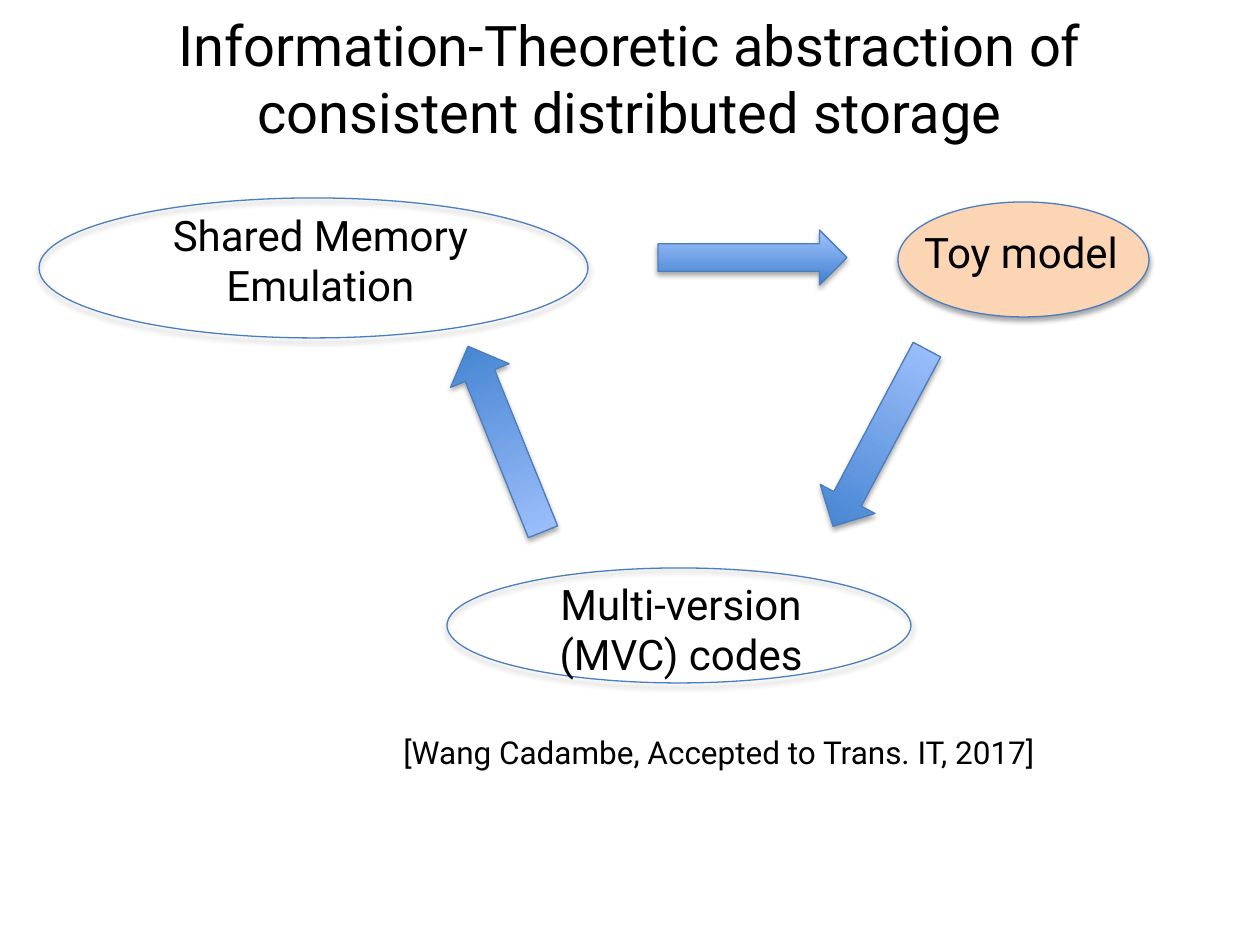
from lxml import etree
from pptx import Presentation
from pptx.dml.color import RGBColor
from pptx.enum.shapes import MSO_SHAPE
from pptx.enum.text import MSO_ANCHOR, MSO_AUTO_SIZE, PP_ALIGN
from pptx.oxml.ns import qn
from pptx.util import Emu, Pt

OVAL, DOWN, RIGHT = MSO_SHAPE.OVAL, MSO_SHAPE.DOWN_ARROW, MSO_SHAPE.RIGHT_ARROW
CENTER, LEFT = PP_ALIGN.CENTER, PP_ALIGN.LEFT

THEME = {
    "font": "Roboto", "text": "000000", "line": "4B7EBC", "peach": "FCD5B5",
    "arrow": ("3F80CE", "A4C4FF"), "shadow": "000000",
    "title": 32, "label": 24, "citation": 18, "line_width": 0.75,
}

# Content: boxes are (left, top, width, height) in px
TITLE = ("Information-Theoretic abstraction of consistent distributed storage",
         (63, -1, 1134, 157))
NODES = [  # label, oval box, label box, fill
    ("Toy model", (898, 202, 251, 115), (830, 220, 382, 64), "peach"),
    ("Shared Memory Emulation", (39, 198, 549, 140), (86, 203, 469, 115), None),
    ("Multi-version (MVC) codes", (447, 568, 464, 115), (490, 572, 382, 115), None),
]
ARROWS = [  # preset, box, rotation
    (RIGHT, (658, 230, 189, 55), 0),
    (DOWN, (849, 338, 62, 200), 28),
    (DOWN, (474, 339, 63, 200), 158),
]
CITATION = ("[Wang Cadambe, Accepted to Trans. IT, 2017]", (391, 727, 659, 51))


def emu(box):
    return [Emu(round(v * 914400 / 126)) for v in box]


def rgb(name):
    return RGBColor.from_string(THEME.get(name, name))


def write(tf, text, size, align=CENTER, wrap=True):
    tf.word_wrap = wrap
    p = tf.paragraphs[0]
    p.text, p.alignment = text, align
    p.font.name, p.font.size = THEME["font"], Pt(THEME[size])
    p.font.color.rgb = rgb("text")


def add_label(s, text, box, size, **options):
    tf = s.shapes.add_textbox(*emu(box)).text_frame
    write(tf, text, size, **options)


def add_outlined(s, preset, box):
    """Add a preset shape with the common thin line and soft drop shadow."""
    sp = s.shapes.add_shape(preset, *emu(box))
    sp.line.color.rgb = rgb("line")
    sp.line.width = Pt(THEME["line_width"])
    sp.shadow.inherit = False
    effects = sp._element.spPr.find(qn("a:effectLst"))
    shadow = etree.SubElement(effects, qn("a:outerShdw"), blurRad=str(Pt(3.1)),
                              dist=str(Pt(1.8)), dir="5400000", rotWithShape="0")
    color = etree.SubElement(shadow, qn("a:srgbClr"), val=THEME["shadow"])
    etree.SubElement(color, qn("a:alpha"), val="35000")
    return sp


prs = Presentation()
prs.slide_width, prs.slide_height = emu((1260, 945))
s = prs.slides.add_slide(prs.slide_layouts[5])

# Title
title = s.shapes.title
title.left, title.top, title.width, title.height = emu(TITLE[1])
write(title.text_frame, TITLE[0], "title")
title.text_frame.auto_size = MSO_AUTO_SIZE.NONE
title.text_frame.vertical_anchor = MSO_ANCHOR.MIDDLE

# Ovals with their labels
for text, oval_box, label_box, fill in NODES:
    oval = add_outlined(s, OVAL, oval_box)
    if fill:
        oval.fill.solid()
        oval.fill.fore_color.rgb = rgb(fill)
    else:
        oval.fill.background()
    add_label(s, text, label_box, "label")

# Cycle of gradient arrows
for preset, box, rotation in ARROWS:
    arrow = add_outlined(s, preset, box)
    arrow.rotation = rotation
    arrow.fill.gradient()
    arrow.fill.gradient_angle = 90
    for stop, color, position in zip(arrow.fill.gradient_stops, THEME["arrow"], (0, 1)):
        stop.color.rgb = rgb(color)
        stop.position = position

# Citation
add_label(s, *CITATION, "citation", align=LEFT, wrap=False)

prs.save("out.pptx")
